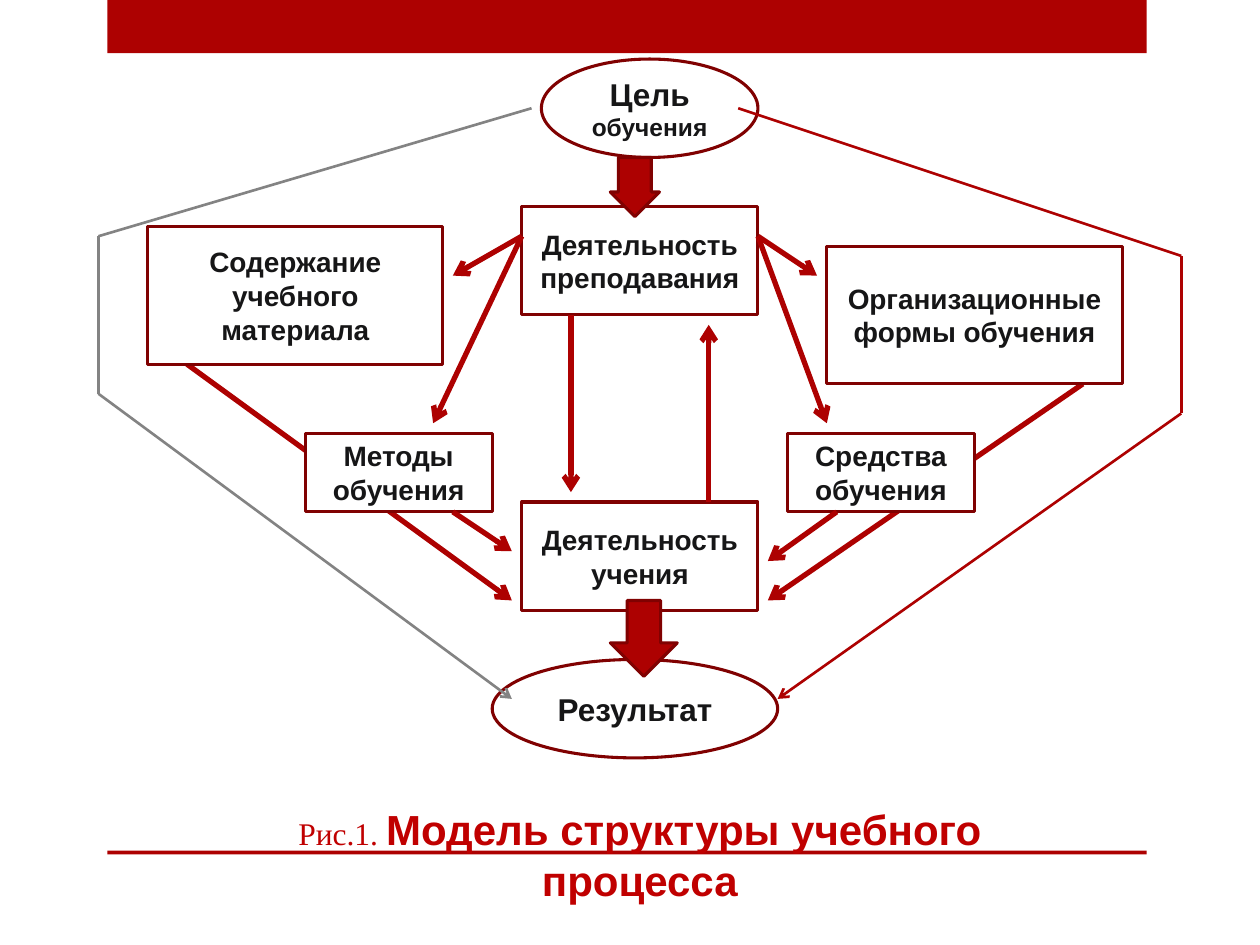
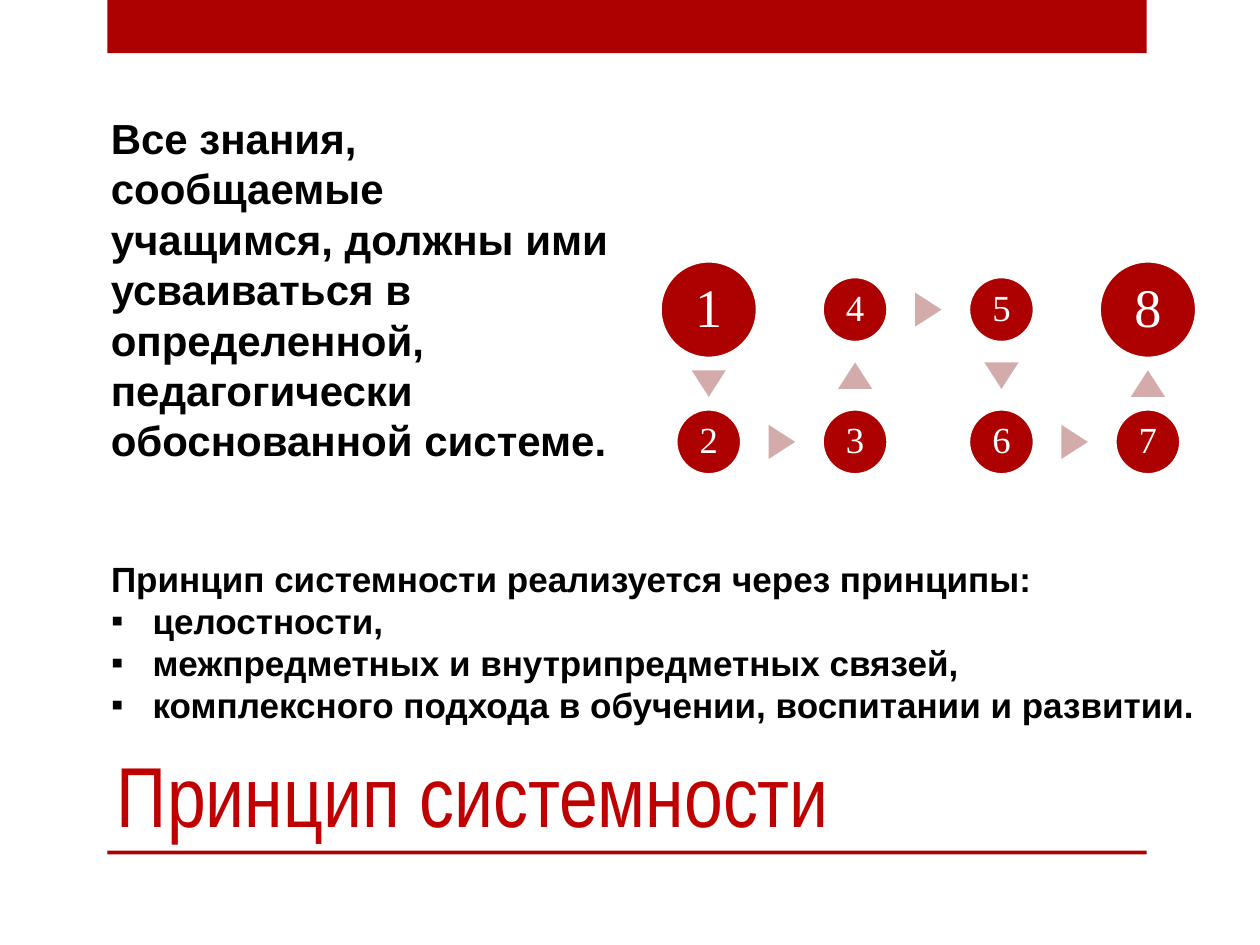
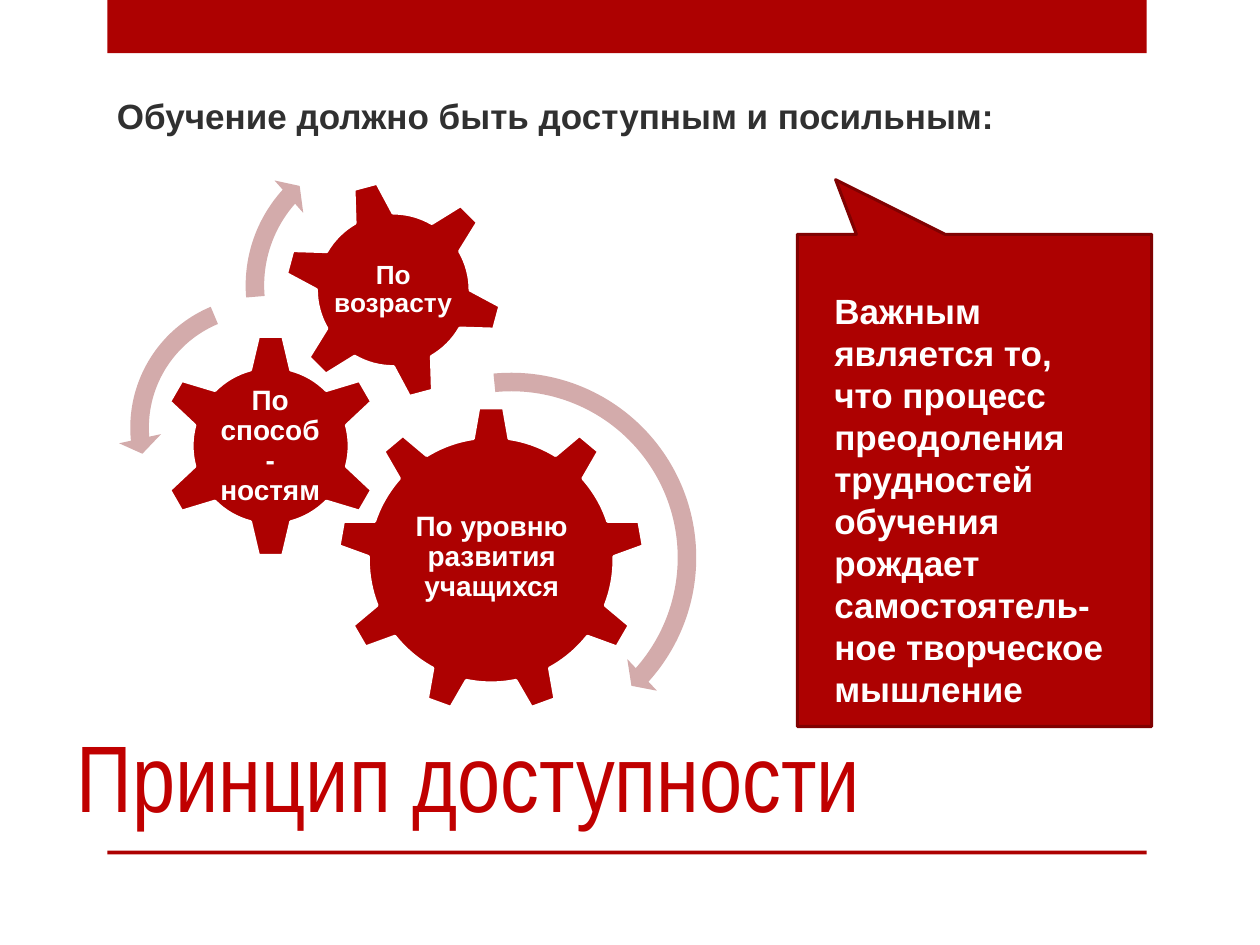
from collections import namedtuple
from dataclasses import dataclass

from lxml.etree import SubElement
from pptx import Presentation
from pptx.dml.color import RGBColor as Rgb
from pptx.enum.shapes import MSO_CONNECTOR as Link, MSO_SHAPE as Kind
from pptx.enum.text import MSO_ANCHOR as Anchor, MSO_AUTO_SIZE as Fit, PP_ALIGN as Align
from pptx.oxml.ns import qn
from pptx.util import Inches, Pt

Style = namedtuple("Style", "font size color bold")


@dataclass(frozen=True)
class Theme:
    red: str = "AD0101"
    edge: str = "800101"
    pale: str = "D3ABAB"
    gray: str = "838383"
    white: str = "FFFFFF"
    thin: float = 1.5
    rim: float = 1.75
    thick: float = 3
    head: Style = Style("Arial Narrow", 54, "C00000", False)
    small: Style = Style("Arial Narrow", 48.6, "C00000", False)
    fig: Style = Style("Times New Roman", 18, "C00000", False)
    name: Style = Style("Arial", 24, "C00000", True)
    box: Style = Style("Arial", 16, "161617", True)
    oval: Style = Style("Arial", 18, "161617", True)
    sub: Style = Style("Arial", 14, "161617", True)
    text: Style = Style("Arial", 24, "000000", True)
    list: Style = Style("Arial", 20, "000000", True)
    lead: Style = Style("Arial", 20, "303030", True)
    note: Style = Style("Arial", 20, "FFFFFF", True)
    gear: Style = Style("Arial", 16, "FFFFFF", True)
    tight: Style = Style("Arial", 15, "FFFFFF", True)
    big: Style = Style("Times New Roman", 31, "FFFFFF", False)
    num: Style = Style("Times New Roman", 21, "FFFFFF", False)


T = Theme()
COLS = 128
WIDE, HIGH = Inches(10), Inches(7.5)
CELL = WIDE / COLS

BANDS = [(10.9, 0, 105.6, 5.4), (10.9, 86.4, 105.6, 0.4)]

CAPTION = [("Рис.1. ", T.fig), ("Модель структуры учебного процесса", T.name)]
UNDER = [[(110, 39), (78, 61)], [(19, 37), (52, 61)]]
NODES = [
    (Kind.OVAL, (55, 6, 22, 10), [("Цель ", T.oval), ("обучения", T.sub)]),
    (Kind.RECTANGLE, (53, 21, 24, 11), [("Деятельность преподавания", T.box)]),
    (Kind.RECTANGLE, (53, 51, 24, 11), [("Деятельность учения", T.box)]),
    (Kind.OVAL, (50, 67, 29, 10), [("Результат", T.oval)]),
    (Kind.RECTANGLE, (15, 23, 30, 14), [("Содержание учебного материала", T.box)]),
    (Kind.RECTANGLE, (84, 25, 30, 14), [("Организационные формы обучения", T.box)]),
    (Kind.RECTANGLE, (31, 44, 19, 8), [("Методы обучения", T.box)]),
    (Kind.RECTANGLE, (80, 44, 19, 8), [("Средства обучения", T.box)]),
]
OVER = [
    [(58, 32), (58, 50)],
    [(72, 51), (72, 33)],
    [(53, 24), (46, 28)],
    [(77, 24), (83, 28)],
    [(53, 24), (44, 43)],
    [(77, 24), (84, 43)],
    [(46, 52), (52, 56)],
    [(85, 52), (78, 57)],
]
LOOPS = [
    (T.gray, [(54, 11), (10, 24), (10, 40), (52, 71)]),
    (T.red, [(75, 11), (120, 26), (120, 42), (79, 71)]),
]

SYSTEM = "Принцип системности"
CLAIM = ("Все знания, сообщаемые учащимся, должны ими усваиваться в определенной, "
         "педагогически обоснованной системе.")
INTRO = "Принцип системности реализуется через принципы:"
POINTS = [
    "целостности,",
    "межпредметных и внутрипредметных связей,",
    "комплексного подхода в обучении, воспитании и развитии.",
]
SNAKE = [(0, 0), (0, 1), (1, 1), (1, 0), (2, 0), (2, 1), (3, 1), (3, 0)]
TURN = {(0, 1): 180, (1, 0): 90, (0, -1): 0}

ACCESS = "Принцип доступности"
LEAD = "Обучение должно быть доступным и посильным:"
NOTE = ("Важным является то, что процесс преодоления трудностей обучения "
        "рождает самостоятель-ное творческое мышление")
GEARS = [
    (Kind.GEAR_9, (34.3, 41.3, 31.2), 0, "По уровню развития учащихся",
     (40.6, 48.6, 18.7, 16.1), T.gear),
    (Kind.GEAR_6, (16.1, 33.9, 22.8), 0, "По способ-ностям",
     (21.8, 39.7, 11.3, 11.3), T.gear),
    (Kind.GEAR_6, (28.8, 18.3, 22.3), 345, "По возрасту",
     (33.7, 23.2, 12.5, 12.5), T.tight),
]
SPINS = [
    (Kind.CIRCULAR_ARROW, (31.9, 36.6, 40.1), (4.7, 299, 2513.1, 15867.9, 5.5)),
    (Kind.LEFT_CIRCULAR_ARROW, (12, 28.9, 29.1), (6.5, 430, 10489.1, 14837.8, 7.5)),
    (Kind.CIRCULAR_ARROW, (23.7, 13.3, 31.4), (6, 394.1, 13313.8, 10508.2, 7)),
]


def span(*cells):
    return [round(n * CELL) for n in cells]


def place(item, area):
    item.left, item.top, item.width, item.height = span(*area)
    return item


def shape(slide, kind, area, fill, line=None, turn=0, adj=()):
    item = slide.shapes.add_shape(kind, *span(*area))
    item.shadow.inherit = False
    item.fill.solid()
    item.fill.fore_color.rgb = Rgb.from_string(fill)
    if line:
        item.line.color.rgb = Rgb.from_string(line)
        item.line.width = Pt(T.rim)
    else:
        item.line.fill.background()
    item.rotation = turn
    for i, share in enumerate(adj):
        item.adjustments[i] = share / 100
    return item


def write(item, paras, align=Align.LEFT, anchor=Anchor.TOP, pad=None, space=1.0):
    frame = item.text_frame
    frame.word_wrap = True
    frame.auto_size = Fit.NONE
    frame.vertical_anchor = anchor
    if pad is not None:
        frame.margin_left = frame.margin_right = Inches(pad)
        frame.margin_top = frame.margin_bottom = Inches(pad)
    for i, runs in enumerate(paras):
        para = frame.paragraphs[0] if i == 0 else frame.add_paragraph()
        para.alignment = align
        para.line_spacing = space
        para.space_before = para.space_after = Pt(0)
        for words, style in runs:
            run = para.add_run()
            run.text = words
            run.font.name = style.font
            run.font.size = Pt(style.size)
            run.font.bold = style.bold
            run.font.color.rgb = Rgb.from_string(style.color)
    return frame


def label(slide, area, words, style, **how):
    return write(slide.shapes.add_textbox(*span(*area)), [[(words, style)]], **how)


def bullet(para, mark=None, gap=0):
    props = para._p.get_or_add_pPr()
    props.set("marL", str(Inches(gap)))
    props.set("indent", str(-Inches(gap)))
    if mark:
        SubElement(props, qn("a:buChar")).set("char", mark)
    else:
        SubElement(props, qn("a:buNone"))


def line(slide, start, end, color, width, arrow=True):
    link = slide.shapes.add_connector(Link.STRAIGHT, *span(*start, *end))
    link.line.color.rgb = Rgb.from_string(color)
    link.line.width = Pt(width)
    props = link.element.spPr
    if arrow:
        SubElement(props.find(qn("a:ln")), qn("a:tailEnd")).set("type", "arrow")
    SubElement(props, qn("a:effectLst"))


def brand(deck, slide):
    for i, area in enumerate(BANDS):
        band = shape(slide, Kind.RECTANGLE, area, T.red).element
        band.nvSpPr.cNvPr.set("id", str(90 + i))
        deck.slide_master.shapes.element.insert(2 + i, band)


def title(slide, area, runs, align=Align.LEFT, anchor=Anchor.BOTTOM):
    write(place(slide.shapes.title, area), [runs], align, anchor)


def model(slide):
    title(slide, (22, 81, 86, 11.6), CAPTION, Align.CENTER, Anchor.TOP)
    for start, end in UNDER:
        line(slide, start, end, T.red, T.thick)
    for kind, area, runs in NODES:
        node = shape(slide, kind, area, T.white, T.edge)
        write(node, [runs], Align.CENTER, Anchor.MIDDLE)
    shape(slide, Kind.DOWN_ARROW, (62, 16, 5, 6), T.red, T.edge, adj=(66.8, 50))
    shape(slide, Kind.UP_ARROW, (62, 61, 6.8, 7.7), T.red, T.edge, 180)
    for start, end in OVER:
        line(slide, start, end, T.red, T.thick)
    for color, spots in LOOPS:
        for start, end in zip(spots, spots[1:]):
            line(slide, start, end, color, T.thin, end == spots[-1])


def system(slide):
    title(slide, (10.6, 64, 95, 22.4), [(SYSTEM, T.small)])
    last = len(SNAKE) - 1
    dots = []
    for i, (col, row) in enumerate(SNAKE):
        edge = i in (0, last)
        size = 9.86 if edge else 6.66
        x, y = 72 + 14.87 * col, 31.45 + 13.44 * row
        dots.append((x, y, size / 2))
        dot = shape(slide, Kind.OVAL, (x - size / 2, y - size / 2, size, size), T.red, T.white)
        write(dot, [[(str(i + 1), T.big if edge else T.num)]],
              Align.CENTER, Anchor.MIDDLE, 0.03, 0.9)
    wide, high = 3.46, 2.69
    for i in range(last):
        (x, y, r), (u, v, q) = dots[i:i + 2]
        (a, b), (c, d) = SNAKE[i:i + 2]
        way = c - a, d - b
        midx = (x + u + way[0] * (r - q)) / 2
        midy = (y + v + way[1] * (r - q)) / 2
        shape(slide, Kind.ISOSCELES_TRIANGLE, (midx - wide / 2, midy - high / 2, wide, high),
              T.pale, turn=TURN[way])
    label(slide, (10, 10.8, 54, 45.2), CLAIM, T.text)
    body = place(slide.placeholders[1], (10, 56, 114.4, 18.6))
    frame = write(body, [[(words, T.list)] for words in [INTRO, *POINTS]])
    bullet(frame.paragraphs[0])
    for para in frame.paragraphs[1:]:
        bullet(para, "▪", 0.33)


def access(slide):
    shape(slide, Kind.RECTANGULAR_CALLOUT, (81, 23.8, 36, 50), T.red, T.edge, 180, (39.2, 61.1))
    title(slide, (6.5, 69.1, 115.2, 16), [(ACCESS, T.head)])
    body = place(slide.placeholders[1], (10.6, 9.6, 105.6, 7.2))
    frame = write(body, [[(LEAD, T.lead)]])
    frame.margin_top = 0
    bullet(frame.paragraphs[0])
    for kind, (x, y, size), turn, words, area, style in GEARS:
        shape(slide, kind, (x, y, size, size), T.red, T.white, turn)
        label(slide, area, words, style, align=Align.CENTER, anchor=Anchor.MIDDLE,
              pad=0.02, space=0.9)
    for kind, (x, y, size), adj in SPINS:
        shape(slide, kind, (x, y, size, size), T.pale, adj=adj)
    label(slide, (83.5, 28.8, 31, 44.4), NOTE, T.note)


def main():
    deck = Presentation()
    deck.slide_width, deck.slide_height = WIDE, HIGH
    for build, layout in ((model, 5), (system, 1), (access, 1)):
        slide = deck.slides.add_slide(deck.slide_layouts[layout])
        if build is model:
            brand(deck, slide)
        build(slide)
    deck.save("out.pptx")


if __name__ == "__main__":
    main()
